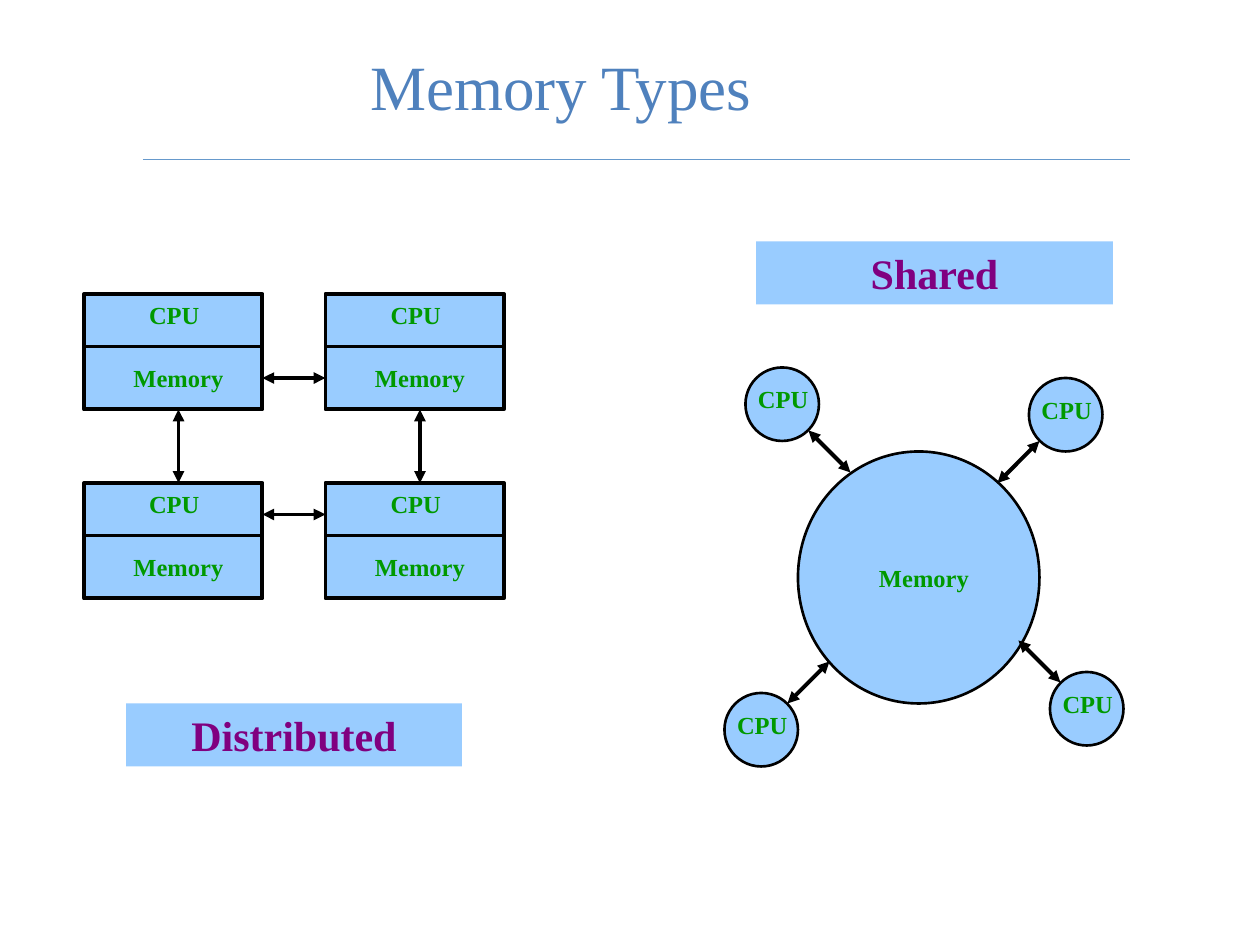
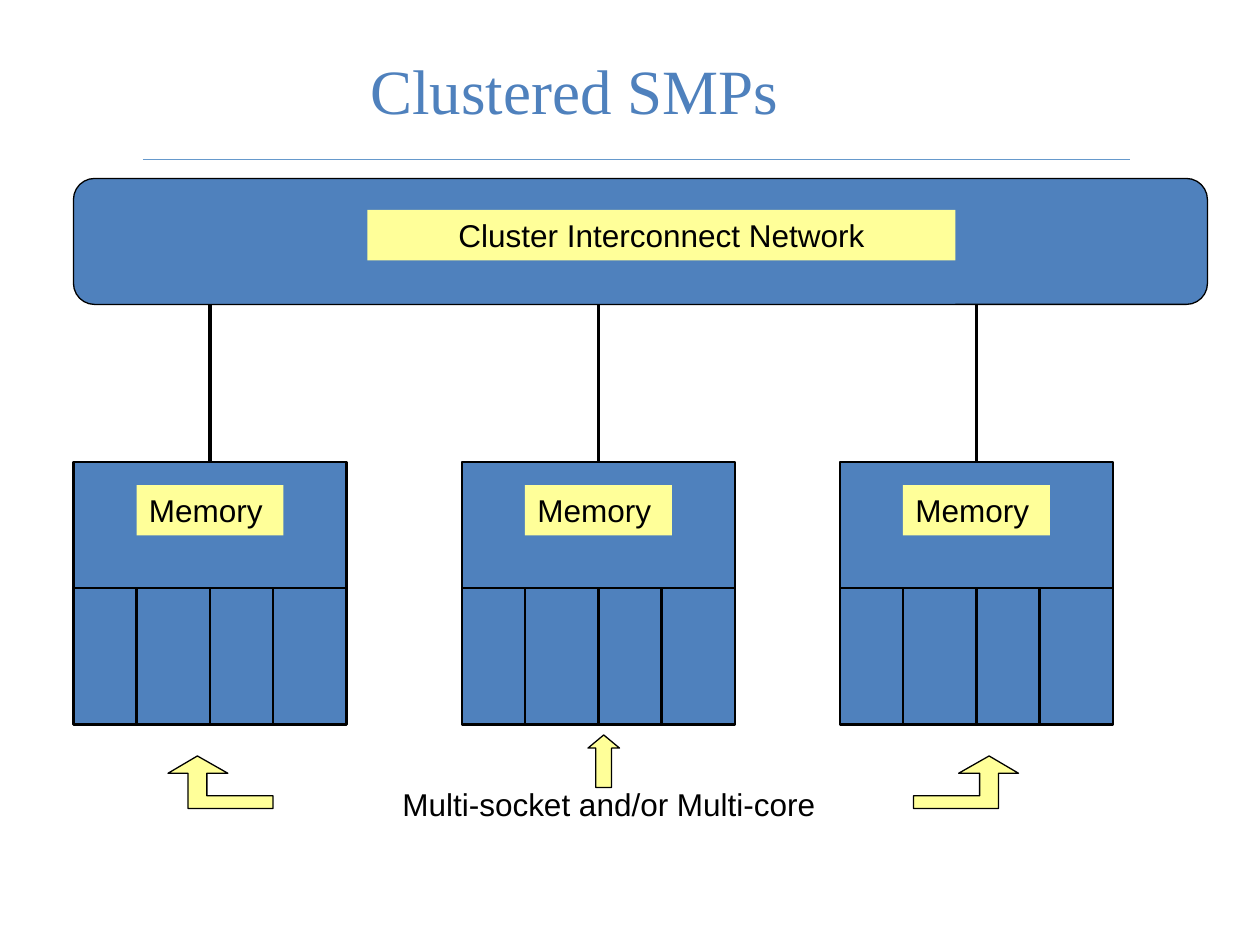
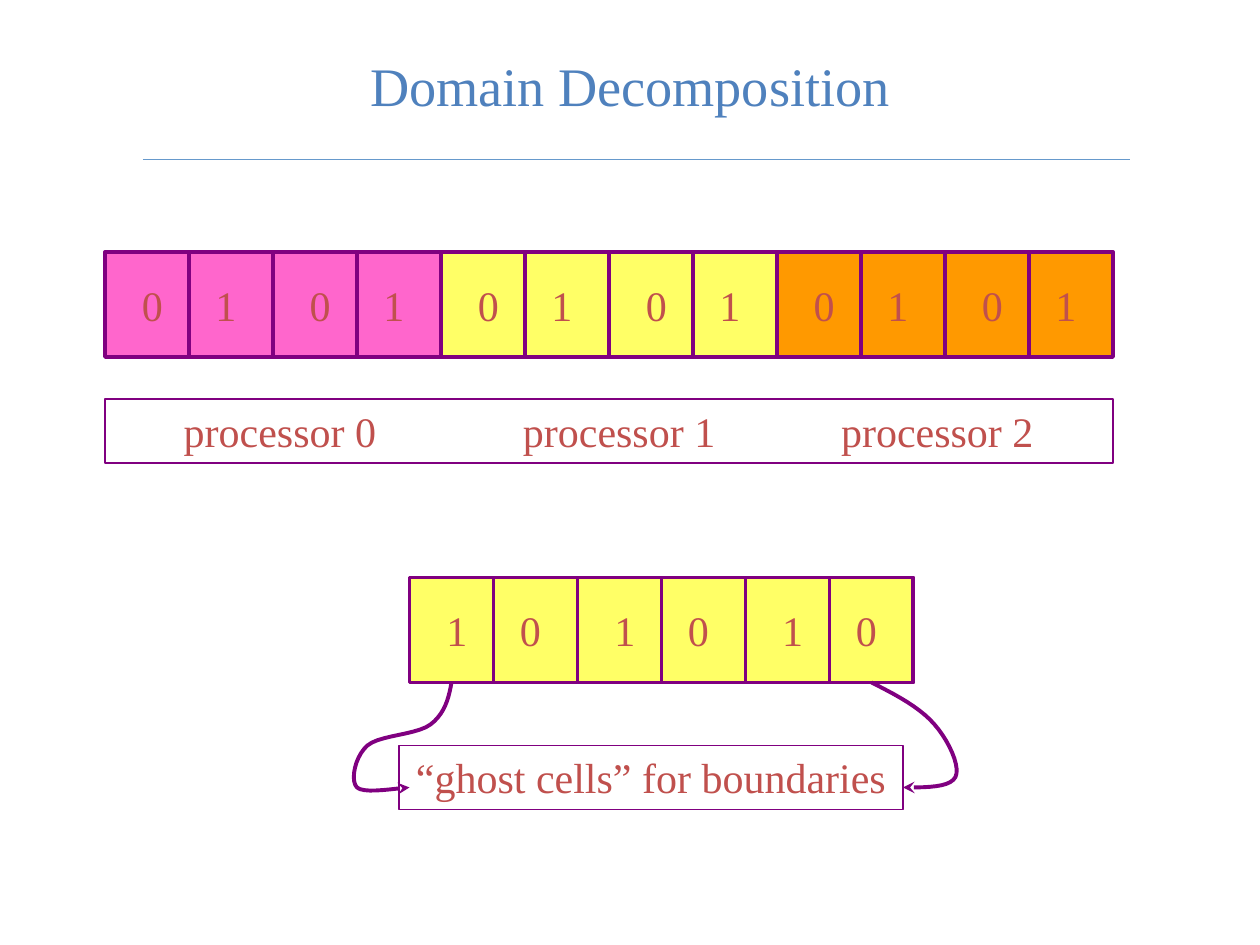
from itertools import product

from lxml import etree
from pptx import Presentation
from pptx.dml.color import RGBColor
from pptx.enum.shapes import MSO_CONNECTOR, MSO_SHAPE
from pptx.enum.text import MSO_ANCHOR, PP_ALIGN
from pptx.oxml.ns import qn
from pptx.util import Inches, Pt

RECTANGLE = MSO_SHAPE.RECTANGLE
ELLIPSE = MSO_SHAPE.OVAL
ROUNDED = MSO_SHAPE.ROUNDED_RECTANGLE
UP_ARROW = MSO_SHAPE.UP_ARROW
STRAIGHT = MSO_CONNECTOR.STRAIGHT
LEFT, CENTER = PP_ALIGN.LEFT, PP_ALIGN.CENTER
TOP, MIDDLE = MSO_ANCHOR.TOP, MSO_ANCHOR.MIDDLE

BLACK = RGBColor(0x00, 0x00, 0x00)
BLUE = RGBColor(0x4F, 0x81, 0xBD)
RULE_BLUE = RGBColor(0x66, 0x99, 0xCC)
SKY = RGBColor(0x99, 0xCC, 0xFF)
GREEN = RGBColor(0x00, 0x99, 0x00)
PURPLE = RGBColor(0x80, 0x00, 0x80)
CREAM = RGBColor(0xFF, 0xFF, 0x99)
PINK = RGBColor(0xFF, 0x66, 0xCC)
YELLOW = RGBColor(0xFF, 0xFF, 0x66)
ORANGE = RGBColor(0xFF, 0x99, 0x00)
RED = RGBColor(0xC0, 0x50, 0x4D)

SERIF, SANS = "Times New Roman", "Arial"

# The slide is a grid of 120 columns by 90 rows of square units.
COLUMNS, ROWS = 120, 90
UNIT = Inches(10) // COLUMNS

CPU_TEXT = dict(size=14, color=GREEN, bold=True)
HEADING_TEXT = dict(size=24, color=PURPLE, bold=True)
SANS_TEXT = dict(size=18, color=BLACK, font=SANS)
CELL_TEXT = dict(size=24, color=RED)


def units(*lengths):
    return [round(length * UNIT) for length in lengths]


def set_fill_and_line(shape, fill, line, width):
    shape.shadow.inherit = False
    if fill is None:
        shape.fill.background()
    else:
        shape.fill.solid()
        shape.fill.fore_color.rgb = fill
    if line is None:
        shape.line.fill.background()
    else:
        shape.line.color.rgb = line
        shape.line.width = Pt(width)


def add_block(slide, box, fill=None, line=None, width=1.5, kind=RECTANGLE):
    shape = slide.shapes.add_shape(kind, *units(*box))
    set_fill_and_line(shape, fill, line, width)
    return shape


def write(shape, text, size, color, font=SERIF, bold=False, align=CENTER,
          anchor=TOP, wrap=True, indent=None, tabs=()):
    """Set the shape's text; indent and tabs are in grid units."""
    frame = shape.text_frame
    frame.word_wrap = wrap
    frame.vertical_anchor = anchor
    if indent is not None:
        frame.margin_left, frame.margin_right = units(indent, 0)
    paragraph = frame.paragraphs[0]
    paragraph.text = text
    paragraph.alignment = align
    if tabs:
        properties = paragraph._p.get_or_add_pPr()
        tab_list = etree.SubElement(properties, qn("a:tabLst"))
        for position in units(*tabs):
            etree.SubElement(tab_list, qn("a:tab"), pos=str(position), algn="l")
    paragraph.font.name = font
    paragraph.font.size = Pt(size)
    paragraph.font.bold = bold
    paragraph.font.color.rgb = color


def add_text(slide, box, text, **style):
    write(slide.shapes.add_textbox(*units(*box)), text, **style)


def add_label(slide, box, text, fill, **style):
    write(add_block(slide, box, fill), text, **style)


def add_arrowheads(shape, **ends):
    """Add ends such as tailEnd="triangle" to the shape's line."""
    line = shape.line._get_or_add_ln()
    for tag, kind in ends.items():
        etree.SubElement(line, qn("a:" + tag), type=kind)


def add_line(slide, start, end, color=BLACK, width=2.25, arrows=False):
    connector = slide.shapes.add_connector(STRAIGHT, *units(*start, *end))
    connector.line.color.rgb = color
    connector.line.width = Pt(width)
    if arrows:
        add_arrowheads(connector, headEnd="triangle", tailEnd="triangle")
    etree.SubElement(connector._element.spPr, qn("a:effectLst"))


def add_outline(slide, points, closed, fill, line, width):
    start, *others = [units(*point) for point in points]
    builder = slide.shapes.build_freeform(*start, scale=1.0)
    builder.add_line_segments(others, close=closed)
    shape = builder.convert_to_shape()
    set_fill_and_line(shape, fill, line, width)
    return shape


def add_titled_slide(presentation, title, size=36, top=0.6):
    slide = presentation.slides.add_slide(presentation.slide_layouts[6])
    add_line(slide, (13.6, 15.2), (107.6, 15.2), RULE_BLUE, 0.75)
    add_text(slide, (34.1, top, 85.9, 15), title, size=size, color=BLUE,
             align=LEFT, anchor=MIDDLE)
    return slide


# Memory types

def add_computer(slide, left, top, width, height):
    divider = top + 5
    add_block(slide, (left, top, width, height), SKY, BLACK, 2.25)
    add_line(slide, (left, divider), (left + width, divider))
    add_text(slide, (left + 5, top, 7.2, 4), "CPU", wrap=False, **CPU_TEXT)
    add_label(slide, (left + 3, top + 6, 12, 4), "Memory", SKY, **CPU_TEXT)


def add_distributed_memory(slide, left, top):
    width, height, column_gap, row_gap = 17, 11, 6, 7
    lefts = (left, left + width + column_gap)
    tops = (top, top + height + row_gap)
    for computer_top, computer_left in product(tops, lefts):
        add_computer(slide, computer_left, computer_top, width, height)
    for computer_left in lefts:
        x = computer_left + 9
        add_line(slide, (x, top + height), (x, tops[1]), arrows=True)
    for y in (tops[0] + 8, tops[1] + 3):
        add_line(slide, (left + width, y), (lefts[1], y), arrows=True)
    add_label(slide, (left + 4, top + 39, 32, 6), "Distributed", SKY, **HEADING_TEXT)


def add_shared_memory(slide, left, top):
    add_label(slide, (left + 3, top, 34, 6), "Shared", SKY, **HEADING_TEXT)
    add_block(slide, (left + 7, top + 20, 23, 24), SKY, BLACK, kind=ELLIPSE)
    add_label(slide, (left + 13, top + 30, 12, 4), "Memory", SKY, **CPU_TEXT)
    # Each CPU has its offset and the direction of the memory.
    for across, down, right, below in ((2, 12, 1, 1), (29, 13, -1, 1),
                                       (0, 43, 1, -1), (31, 41, -1, -1)):
        x, y = left + across, top + down
        add_block(slide, (x, y, 7, 7), SKY, BLACK, kind=ELLIPSE)
        add_text(slide, (x, y + 1, 7.2, 4), "CPU", wrap=False, **CPU_TEXT)
        start = (x + 3.5 + 2.5 * right, y + 3.5 + 2.5 * below)
        end = (start[0] + 4 * right, start[1] + 4 * below)
        add_line(slide, start, end, arrows=True)


def build_memory_types(presentation):
    slide = add_titled_slide(presentation, "Memory Types")
    add_distributed_memory(slide, 8, 28)
    add_shared_memory(slide, 69, 23)


# Clustered SMPs

BENT_ARROW = ((0.72, 0), (1, 0.33), (0.81, 0.33), (0.81, 1), (0, 1),
              (0, 0.76), (0.63, 0.76), (0.63, 0.33), (0.43, 0.33))


def add_network(slide, left, top, width, height):
    network = add_block(slide, (left, top, width, height), BLUE, BLACK, 0.75, ROUNDED)
    network.adjustments[0] = 0.167
    add_label(slide, (left + 28, top + 3, 56, 4.8), "Cluster Interconnect Network",
              CREAM, **SANS_TEXT)


def add_smp(slide, left, top, width, height, network_bottom):
    divider = top + 12
    add_block(slide, (left, top, width, height), BLUE, BLACK)
    add_line(slide, (left, divider), (left + width, divider), width=1.5)
    for offset in (6, 13, 19):
        x = left + offset
        add_line(slide, (x, divider), (x, top + height), width=1.5)
    add_label(slide, (left + 6, top + 2.2, 14, 4.8), "Memory", CREAM,
              align=LEFT, **SANS_TEXT)
    add_line(slide, (left + width / 2, network_bottom), (left + width / 2, top))


def add_bent_arrow(slide, left, top, width, height, mirrored):
    points = [(left + width * (1 - x if mirrored else x), top + height * y)
              for x, y in BENT_ARROW]
    add_outline(slide, points, True, CREAM, BLACK, 0.75)


def build_clustered_smps(presentation):
    slide = add_titled_slide(presentation, "Clustered SMPs", top=1)
    add_network(slide, 7, 17, 108, 12)
    for left in (7, 44, 80):
        add_smp(slide, left, 44, 26, 25, network_bottom=29)
    add_text(slide, (34, 74.2, 48, 4.8), "Multi-socket and/or Multi-core", **SANS_TEXT)
    add_bent_arrow(slide, 87, 72, 10, 5, mirrored=False)
    add_bent_arrow(slide, 16, 72, 10, 5, mirrored=True)
    up_arrow = add_block(slide, (56, 70, 3, 5), CREAM, BLACK, 0.75, UP_ARROW)
    up_arrow.adjustments[1] = 0.417


# Domain decomposition

PAIR_WIDTH, PAIR_HEIGHT = 16, 10

# Start point, then two controls and an end for each curve, from the ghost row's corner.
LEFT_CURVE = ((4, 10), (3.75, 11.5), (3.33, 13), (2, 14), (0.67, 15), (-2.83, 15),
              (-4, 16), (-5.17, 17), (-5.67, 19.33), (-5, 20), (-4.33, 20.67),
              (-0.83, 20), (0, 20))
RIGHT_CURVE = ((44, 10), (46.33, 11.17), (48.67, 12.42), (50, 14), (51.33, 15.5),
               (52.5, 18), (52, 19), (51.5, 20), (49.25, 20), (47, 20))


def add_cell_pairs(slide, left, top, digits, fills):
    for index, fill in enumerate(fills):
        x = left + index * PAIR_WIDTH
        pair = add_block(slide, (x, top, PAIR_WIDTH, PAIR_HEIGHT), fill, PURPLE, 2.25)
        write(pair, "\t".join(digits), align=LEFT, anchor=MIDDLE, indent=3.5,
              tabs=(7,), **CELL_TEXT)
        middle = x + PAIR_WIDTH / 2
        add_line(slide, (middle, top), (middle, top + PAIR_HEIGHT), PURPLE)


def bezier_point(controls, share):
    rest = 1 - share
    weights = (rest ** 3, 3 * rest ** 2 * share, 3 * rest * share ** 2, share ** 3)
    return tuple(sum(weight * value for weight, value in zip(weights, axis))
                 for axis in zip(*controls))


def add_curved_arrow(slide, left, top, curve, steps=10):
    points = [curve[0]]
    for first in range(0, len(curve) - 1, 3):
        controls = curve[first:first + 4]
        points += [bezier_point(controls, step / steps) for step in range(1, steps + 1)]
    placed = [(left + x, top + y) for x, y in points]
    arrow = add_outline(slide, placed, False, None, PURPLE, 2.25)
    add_arrowheads(arrow, tailEnd="stealth")


def add_ghost_cells(slide, left, top):
    add_cell_pairs(slide, left, top, "10", [YELLOW] * 3)
    caption = add_block(slide, (left - 1, top + 16, 48, 6.1), None, PURPLE, 1)
    write(caption, "“ghost cells” for boundaries", **CELL_TEXT)
    for curve in (LEFT_CURVE, RIGHT_CURVE):
        add_curved_arrow(slide, left, top, curve)


def build_domain_decomposition(presentation):
    slide = add_titled_slide(presentation, "Domain Decomposition", size=31)
    fills = [fill for fill in (PINK, YELLOW, ORANGE) for _ in range(2)]
    add_cell_pairs(slide, 10, 24, "01", fills)
    processors = add_block(slide, (10, 38, 96, 6.1), None, PURPLE, 1)
    write(processors, "\t".join(f"processor {number}" for number in range(3)),
          align=LEFT, indent=7.5, tabs=(32.3, 62.6), **CELL_TEXT)
    add_ghost_cells(slide, 39, 55)


def main():
    presentation = Presentation()
    presentation.slide_width = COLUMNS * UNIT
    presentation.slide_height = ROWS * UNIT
    build_memory_types(presentation)
    build_clustered_smps(presentation)
    build_domain_decomposition(presentation)
    presentation.save("out.pptx")


if __name__ == "__main__":
    main()
